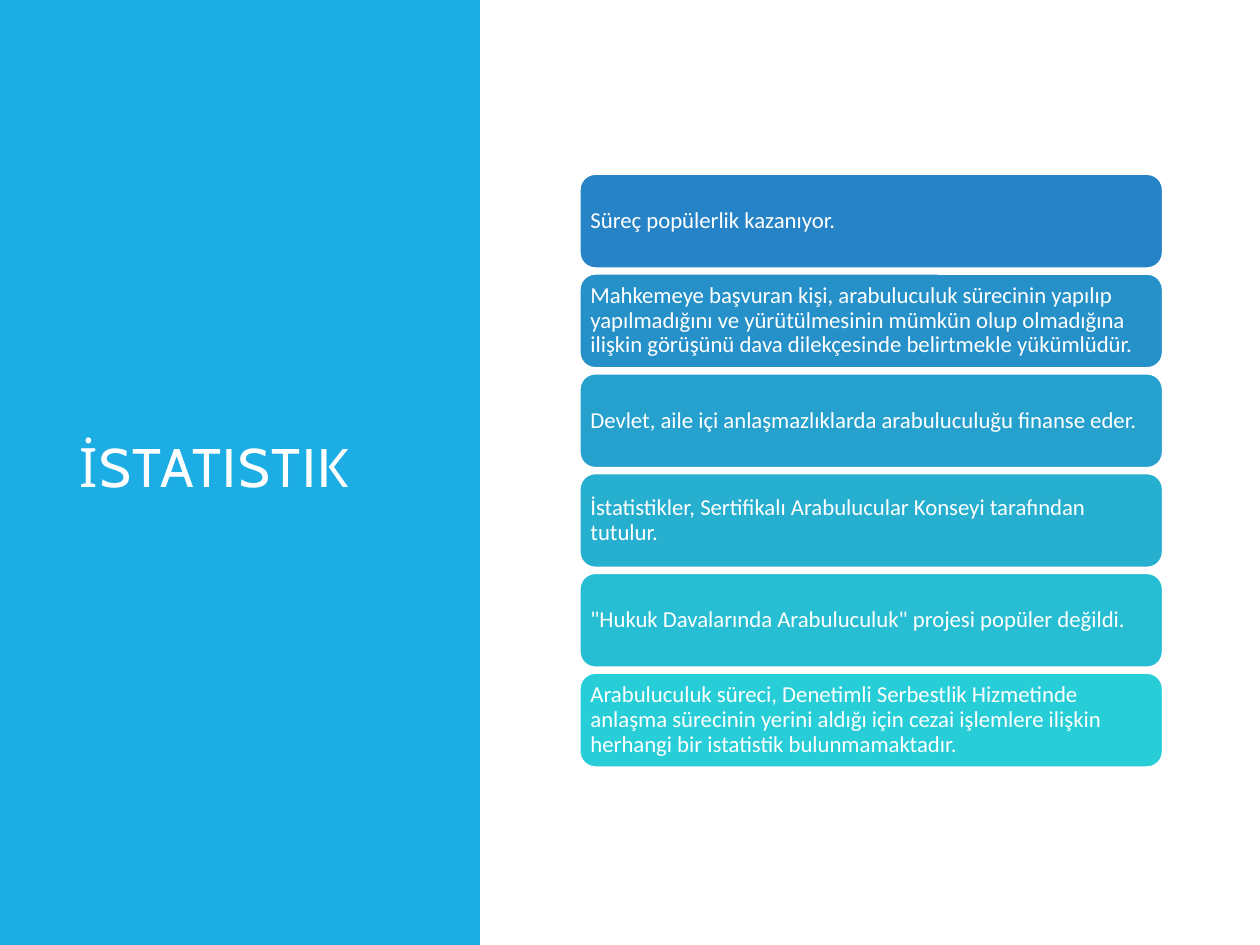
from dataclasses import dataclass

from pptx import Presentation
from pptx.dml.color import RGBColor
from pptx.enum.shapes import MSO_SHAPE as SHAPE
from pptx.enum.text import MSO_ANCHOR as ANCHOR, PP_ALIGN as ALIGN
from pptx.util import Inches, Pt


@dataclass(frozen=True)
class Theme:
    """Colours, fonts and type sizes of the slide."""
    panel: str = "1CADE4"
    white: str = "FFFFFF"
    cards: tuple = ("2683C6", "2691C9", "26A0CD", "27AFD0", "27BED4", "27CED7")
    title_font: str = "Cabin"
    body_font: str = "Calibri"
    title_size: float = 31
    body_size: float = 13


THEME = Theme()
TITLE = "İSTATISTIK"
STATEMENTS = (
    "Süreç popülerlik kazanıyor.",
    "Mahkemeye başvuran kişi, arabuluculuk sürecinin yapılıp yapılmadığını ve "
    "yürütülmesinin mümkün olup olmadığına ilişkin görüşünü dava dilekçesinde "
    "belirtmekle yükümlüdür.",
    "Devlet, aile içi anlaşmazlıklarda arabuluculuğu finanse eder.",
    "İstatistikler, Sertifikalı Arabulucular Konseyi tarafından tutulur.",
    "\"Hukuk Davalarında Arabuluculuk\" projesi popüler değildi.",
    "Arabuluculuk süreci, Denetimli Serbestlik Hizmetinde anlaşma sürecinin "
    "yerini aldığı için cezai işlemlere ilişkin herhangi bir istatistik "
    "bulunmamaktadır.",
)


def add_block(slide, kind, box, fill, line=None):
    """Add a flat filled shape with an optional outline."""
    sp = slide.shapes.add_shape(kind, *map(Inches, box))
    sp.shadow.inherit = False
    sp.fill.solid()
    sp.fill.fore_color.rgb = RGBColor.from_string(fill)
    if line:
        sp.line.color.rgb = RGBColor.from_string(line)
        sp.line.width = Pt(1.25)
    else:
        sp.line.fill.background()
    return sp


def write_text(sp, text, font, size, leading, inset=None, tracking=None):
    """Write one left-aligned, vertically centred paragraph in a shape."""
    tf = sp.text_frame
    tf.word_wrap = True
    tf.vertical_anchor = ANCHOR.MIDDLE
    if inset is not None:
        tf.margin_left = tf.margin_right = Inches(inset)
        tf.margin_top = tf.margin_bottom = Inches(inset)
    p = tf.paragraphs[0]
    p.alignment = ALIGN.LEFT
    p.line_spacing = leading
    r = p.add_run()
    r.text = text
    r.font.name = font
    r.font.size = Pt(size)
    r.font.color.rgb = RGBColor.from_string(THEME.white)
    if tracking:
        r.font._element.set("spc", str(int(tracking * 100)))


def add_title_panel(slide, box):
    """Place the coloured panel and the slide title inside it."""
    left, top, width, height = box
    add_block(slide, SHAPE.RECTANGLE, box, THEME.panel)
    title_box = (left + 0.53, top + 0.7, width - 1.01, height - 1.41)
    sp = slide.shapes.add_textbox(*map(Inches, title_box))
    write_text(sp, TITLE, THEME.title_font, THEME.title_size, 0.8, tracking=1)


def add_statements(slide, box, card_height=0.75):
    """Stack the statement cards evenly from top to bottom of the box."""
    left, top, width, height = box
    pitch = (height - card_height) / (len(STATEMENTS) - 1)
    for i, (text, fill) in enumerate(zip(STATEMENTS, THEME.cards)):
        card = (left, top + i * pitch, width, card_height)
        sp = add_block(slide, SHAPE.ROUNDED_RECTANGLE, card, fill, THEME.white)
        write_text(sp, text, THEME.body_font, THEME.body_size, 0.9, inset=0.05)


def main():
    """Build and save the presentation."""
    prs = Presentation()
    prs.slide_width, prs.slide_height = Inches(10), Inches(7.5)
    slide = prs.slides.add_slide(prs.slide_layouts[6])
    add_title_panel(slide, (0, 0, 3.81, 7.5))
    add_statements(slide, (4.6, 1.38, 4.63, 4.71))
    prs.save("out.pptx")


if __name__ == "__main__":
    main()
